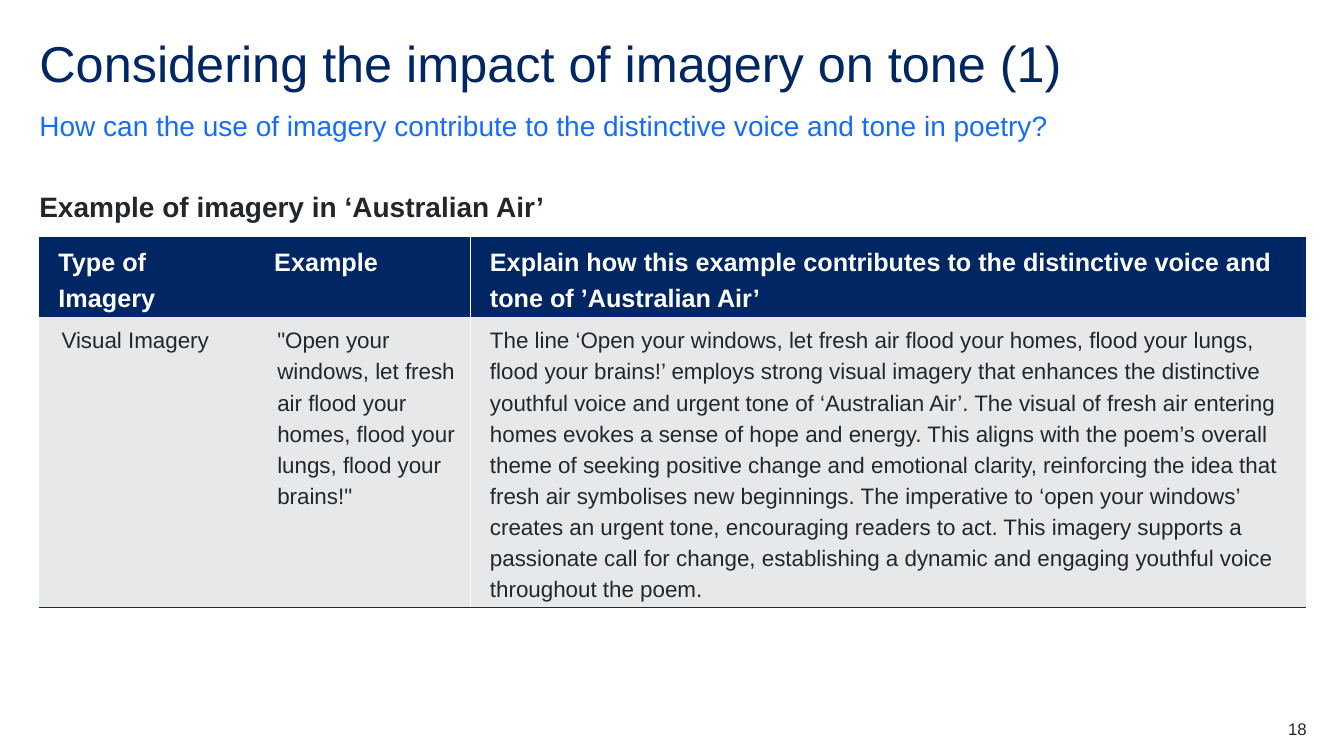
import pptx
import pptx.dml.color
import pptx.enum.text
import pptx.oxml
import pptx.oxml.ns
import pptx.util

RGBColor = pptx.dml.color.RGBColor
PP_ALIGN = pptx.enum.text.PP_ALIGN
MSO_ANCHOR = pptx.enum.text.MSO_ANCHOR

PX = 9144  # 100 px to the inch
NAVY = RGBColor(0x00, 0x26, 0x64)
BLUE = RGBColor(0x14, 0x6C, 0xFD)
INK = RGBColor(0x22, 0x27, 0x2B)
GREY = RGBColor(0xE7, 0xE8, 0xEA)
WHITE = RGBColor(0xFF, 0xFF, 0xFF)
LEFT, WIDTH = 39, 1256
NO_GRID_STYLE = "{2D5ABB26-0587-4C30-8999-92F81FD0307C}"


def write(frame, text, size, color, bold=False, spacing=None, after=0, align=PP_ALIGN.LEFT):
    frame.text = text
    paragraph = frame.paragraphs[0]
    paragraph.alignment = align
    paragraph.line_spacing = spacing
    paragraph.space_after = pptx.util.Pt(after)
    font = paragraph.runs[0].font
    font.name, font.bold = "Arial", bold
    font.size = pptx.util.Pt(size)
    font.color.rgb = color
    return paragraph


def set_box(shape, anchor=MSO_ANCHOR.TOP):
    """Remove the insets and let the text wrap in a box of fixed size."""
    frame = shape.text_frame
    frame.margin_left = frame.margin_right = frame.margin_top = frame.margin_bottom = 0
    frame.word_wrap = True
    frame.auto_size = pptx.enum.text.MSO_AUTO_SIZE.NONE
    frame.vertical_anchor = anchor
    return frame


deck = pptx.Presentation()
deck.slide_width, deck.slide_height = 1333 * PX, 750 * PX
slide = deck.slides.add_slide(deck.slide_layouts[5])

title = slide.shapes.title
title.left, title.top, title.width, title.height = LEFT * PX, 39 * PX, WIDTH * PX, 60 * PX
write(set_box(title), "Considering the impact of imagery on tone (1)", 36, NAVY, spacing=0.9)

question = slide.shapes.add_textbox(LEFT * PX, 107 * PX, WIDTH * PX, 34 * PX)
write(set_box(question, MSO_ANCHOR.BOTTOM),
      "How can the use of imagery contribute to the distinctive voice and tone in poetry?",
      20, BLUE, spacing=1.5, after=12)

heading = slide.shapes.add_textbox(LEFT * PX, 171 * PX, WIDTH * PX, 64 * PX)
write(set_box(heading), "Example of imagery in ‘Australian Air’", 20, INK,
      bold=True, spacing=1.5, after=12)

rows = [
    ["Type of Imagery", "Example",
     "Explain how this example contributes to the distinctive voice and "
     "tone of ’Australian Air’"],
    ["Visual Imagery",
     "\"Open your windows, let fresh air flood your homes, flood your lungs, "
     "flood your brains!\"",
     "The line ‘Open your windows, let fresh air flood your homes, flood your lungs, "
     "flood your brains!’ employs strong visual imagery that enhances the distinctive "
     "youthful voice and urgent tone of ‘Australian Air’. The visual of fresh air entering "
     "homes evokes a sense of hope and energy. This aligns with the poem’s overall theme "
     "of seeking positive change and emotional clarity, reinforcing the idea that fresh "
     "air symbolises new beginnings. The imperative to ‘open your windows’ creates an "
     "urgent tone, encouraging readers to act. This imagery supports a passionate call "
     "for change, establishing a dynamic and engaging youthful voice throughout the poem."],
]
column_widths = [214, 214, 828]
row_heights = [62, 266]

imagery = slide.shapes.add_table(2, 3, LEFT * PX, 235 * PX, WIDTH * PX,
                                 sum(row_heights) * PX).table
imagery.horz_banding = False
imagery.first_row = True
imagery._tbl.tblPr.find(pptx.oxml.ns.qn("a:tableStyleId")).text = NO_GRID_STYLE
for column, width in zip(imagery.columns, column_widths):
    column.width = width * PX
for row, height in zip(imagery.rows, row_heights):
    row.height = height * PX

for r, texts in enumerate(rows):
    header = r == 0
    for c, text in enumerate(texts):
        cell = imagery.cell(r, c)
        paragraph = write(cell.text_frame, text, 18 if header else 16,
                          WHITE if header else INK, bold=header, spacing=1.25, after=12)
        paragraph._p.get_or_add_pPr().set("marL", str(12 * PX))
        side_inset = 7 if header or c == 2 else 10
        cell.margin_left = cell.margin_right = side_inset * PX
        cell.margin_top = cell.margin_bottom = 5 * PX

        borders = []
        if c == 2:
            borders.append(("lnL", WHITE))
        if c == 1:
            borders.append(("lnR", WHITE))
        if not header:
            borders.append(("lnB", INK))
        for side, color in borders:
            cell._tc.get_or_add_tcPr().append(pptx.oxml.parse_xml(
                f'<a:{side} {pptx.oxml.ns.nsdecls("a")} w="12700"><a:solidFill>'
                f'<a:srgbClr val="{color}"/></a:solidFill></a:{side}>'))
        cell.fill.solid()
        cell.fill.fore_color.rgb = NAVY if header else GREY

page_number = slide.shapes.add_textbox(1217 * PX, 713 * PX, 79 * PX, 20 * PX)
write(set_box(page_number), "18", 12, INK, align=PP_ALIGN.RIGHT)

deck.save("out.pptx")
